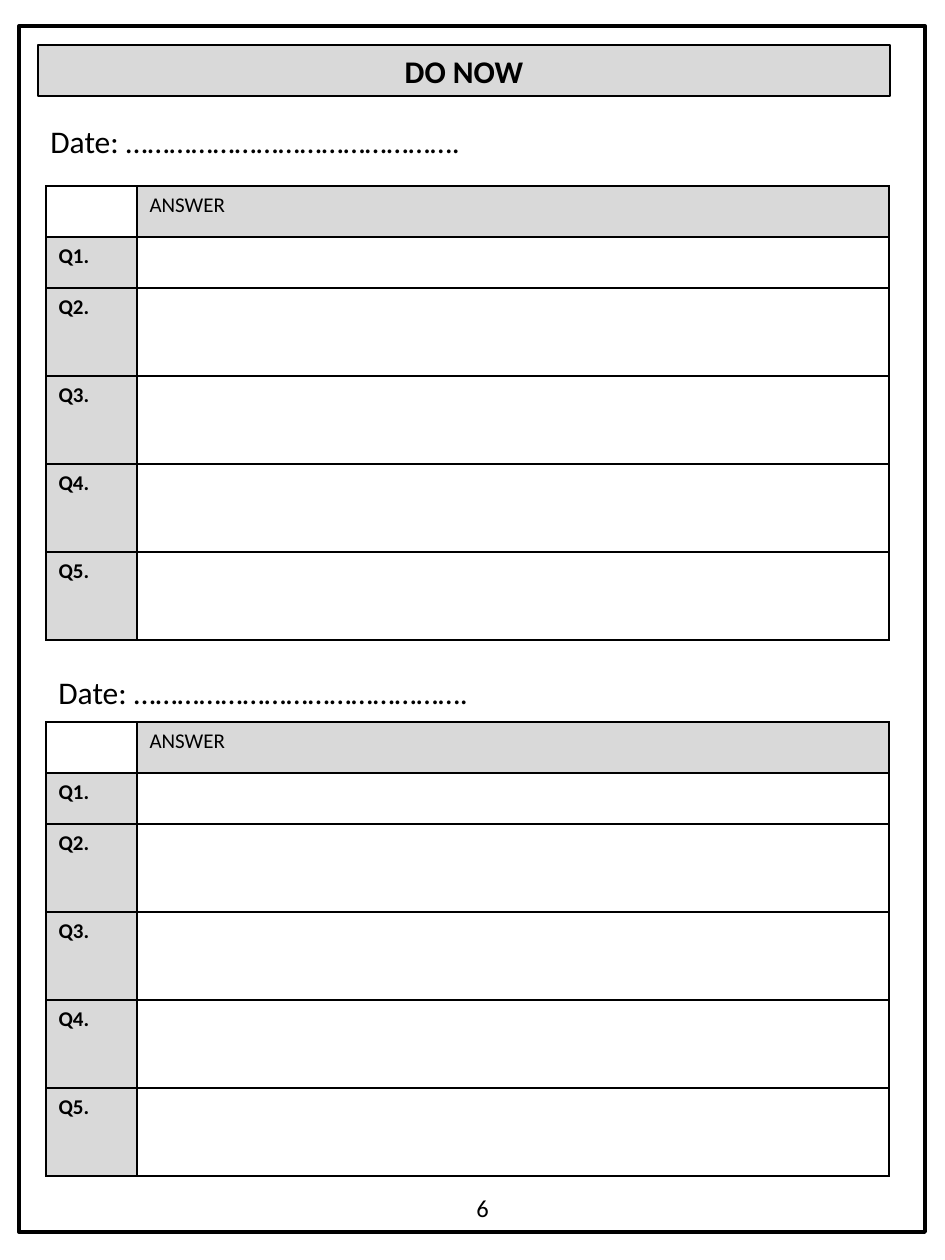
from dataclasses import dataclass

from lxml import etree
from pptx import Presentation
from pptx.dml.color import RGBColor
from pptx.enum import shapes, text
from pptx.oxml import ns
from pptx.util import Pt

PX = 914400 // 126  # EMU in one px


@dataclass(frozen=True)
class Theme:
    font: str = "Calibri"
    ink: RGBColor = RGBColor(0, 0, 0)
    shade: RGBColor = RGBColor(0xD9, 0xD9, 0xD9)
    heading: int = 18
    page: int = 14
    body: int = 12
    frame_line: float = 2.25
    title_line: float = 0.75
    grid_line: int = 1


THEME = Theme()
QUESTIONS = ["Q1.", "Q2.", "Q3.", "Q4.", "Q5."]
DATE_LINE = "Date: ………………………………………."


def emu(*lengths):
    return [length * PX for length in lengths]


def add_text(frame, words, size, bold=False):
    run = frame.paragraphs[0].add_run()
    run.text = words
    run.font.name = THEME.font
    run.font.size = Pt(size)
    run.font.bold = bold
    run.font.color.rgb = THEME.ink


def add_box(slide, box, line_width, fill=None):
    shape = slide.shapes.add_shape(shapes.MSO_SHAPE.RECTANGLE, *emu(*box))
    shape.shadow.inherit = False
    shape.line.color.rgb = THEME.ink
    shape.line.width = Pt(line_width)
    if fill is None:
        shape.fill.background()
    else:
        shape.fill.solid()
        shape.fill.fore_color.rgb = fill
    return shape


def add_label(slide, box, words, size):
    label = slide.shapes.add_textbox(*emu(*box))
    label.text_frame.word_wrap = True
    add_text(label.text_frame, words, size)


def add_title(slide, box):
    title = add_box(slide, box, THEME.title_line, THEME.shade)
    title.text_frame.paragraphs[0].alignment = text.PP_ALIGN.CENTER
    add_text(title.text_frame, "DO NOW", THEME.heading, bold=True)


def style_cell(cell, shaded):
    # Borders come before the fill in the cell properties
    properties = cell._tc.get_or_add_tcPr()
    for side in ("a:lnL", "a:lnR", "a:lnT", "a:lnB"):
        line = etree.SubElement(properties, ns.qn(side), w=str(Pt(THEME.grid_line)))
        fill = etree.SubElement(line, ns.qn("a:solidFill"))
        etree.SubElement(fill, ns.qn("a:srgbClr"), val=str(THEME.ink))
    if shaded:
        cell.fill.solid()
        cell.fill.fore_color.rgb = THEME.shade
    else:
        cell.fill.background()


def add_answer_table(slide, box):
    left, top, width, height = box
    label_width, short_row = 91, 51
    tall_row = (height - 2 * short_row) // 4
    rows = [short_row] * 2 + [tall_row] * 4

    table = slide.shapes.add_table(len(rows), 2, *emu(*box)).table
    table.first_row = table.horz_banding = False
    for column, size in zip(table.columns, emu(label_width, width - label_width)):
        column.width = size
    for row, size in zip(table.rows, emu(*rows)):
        row.height = size

    # Header row and question column are shaded, except their shared corner
    for row in range(len(rows)):
        for column in range(2):
            style_cell(table.cell(row, column), (row == 0) != (column == 0))
    add_text(table.cell(0, 1).text_frame, "ANSWER", THEME.body)
    for row, question in enumerate(QUESTIONS, start=1):
        add_text(table.cell(row, 0).text_frame, question, THEME.body, bold=True)


def add_worksheet(slide, box):
    left, top, width, height = box

    # Page frame and title
    add_box(slide, box, THEME.frame_line)
    add_title(slide, (left + 19, top + 19, 852, 51))

    # Two dated answer grids
    for date_left, date_top, table_top in ((19, 90, 160), (27, 641, 696)):
        add_label(slide, (left + date_left, top + date_top, 649, 51),
                  DATE_LINE, THEME.heading)
        add_answer_table(slide, (left + 27, top + table_top, 843, 454))

    # Page number
    add_label(slide, (left + 445, top + 1161, 67, 42), "6", THEME.page)


def main():
    presentation = Presentation()
    presentation.slide_width, presentation.slide_height = emu(945, 1260)
    slide = presentation.slides.add_slide(presentation.slide_layouts[6])
    add_worksheet(slide, (19, 26, 906, 1206))
    presentation.save("out.pptx")


if __name__ == "__main__":
    main()
